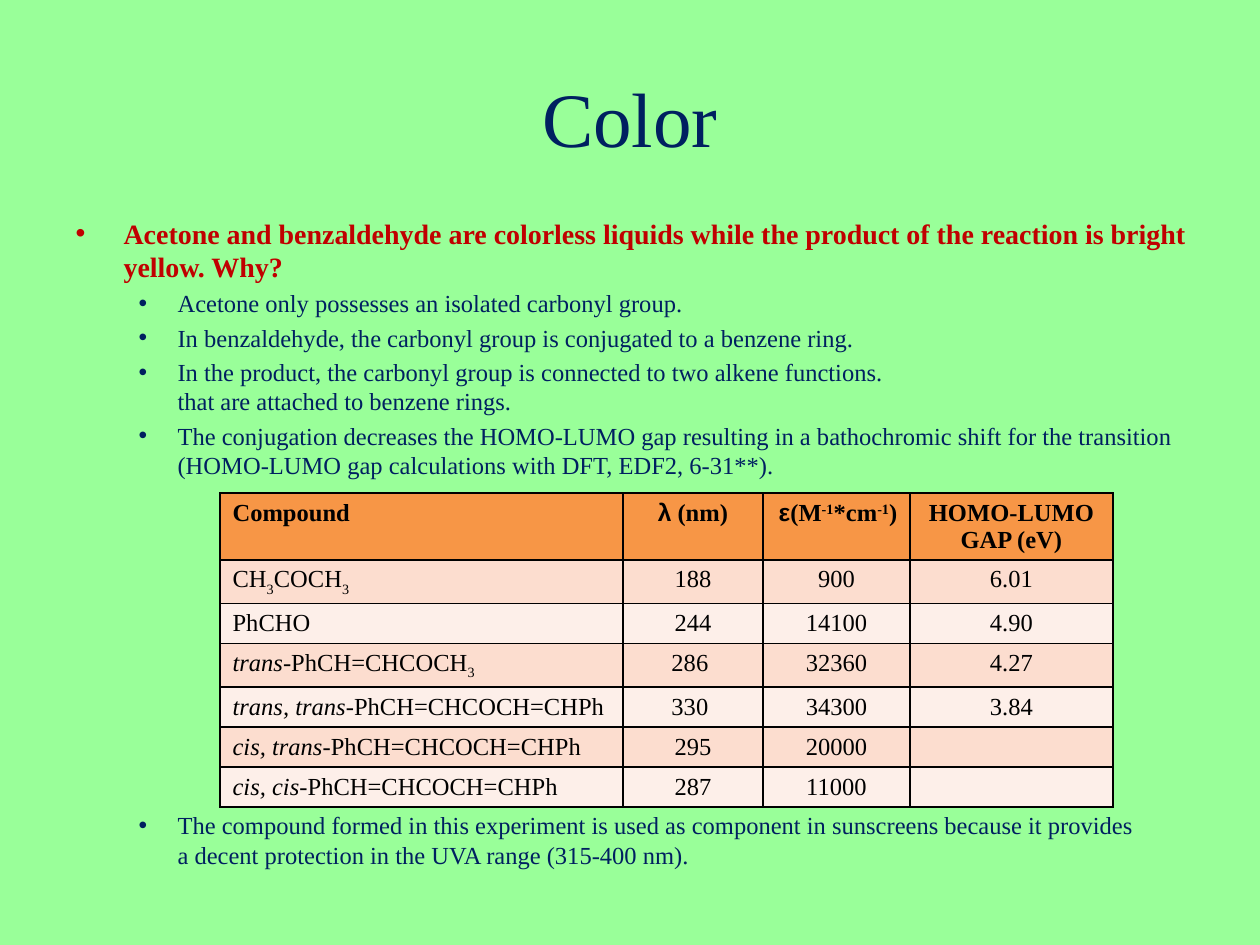
import copy

import lxml.etree
import pptx
import pptx.dml.color
import pptx.enum.text
import pptx.oxml.ns
import pptx.util

PX = 914400 // 126
NAVY = pptx.dml.color.RGBColor(0x00, 0x20, 0x60)
RED = pptx.dml.color.RGBColor(0xC0, 0x00, 0x00)
BLACK = pptx.dml.color.RGBColor(0x00, 0x00, 0x00)
GREEN = pptx.dml.color.RGBColor(0x99, 0xFF, 0x99)
ORANGE = pptx.dml.color.RGBColor(0xF7, 0x96, 0x46)
BANDS = (pptx.dml.color.RGBColor(0xFD, 0xEF, 0xE9),
         pptx.dml.color.RGBColor(0xFC, 0xDD, 0xCF))
ALIGN = pptx.enum.text.PP_ALIGN

FONT = "Times New Roman"
SUB = {"baseline": -25}
SUPER = {"baseline": 30}
ITALIC = {"italic": True}
ARIAL = {"font": "Arial"}

QUESTION = ("Acetone and benzaldehyde are colorless liquids while the product "
            "of the reaction is bright yellow. Why?")
POINTS = (
    "Acetone only possesses an isolated carbonyl group.",
    "In benzaldehyde, the carbonyl group is conjugated to a benzene ring.",
    "In the product, the carbonyl group is connected to two alkene functions. \n"
    "that are attached to benzene rings.",
    "The conjugation decreases the HOMO-LUMO gap resulting in a bathochromic "
    "shift for the transition (HOMO-LUMO gap calculations with DFT, EDF2, 6-31**).",
)
CONCLUSION = ("The compound formed in this experiment is used as component in "
              "sunscreens because it provides \n"
              "a decent protection in the UVA range (315-400 nm).")

# Each cell is a list of runs: (text, format).
HEADER = (
    [("Compound", {})],
    [("λ", ARIAL), (" (nm)", {})],
    [("ε", ARIAL), ("(M", {}), ("-1", SUPER), ("*cm", {}), ("-1", SUPER), (")", {})],
    [("HOMO-LUMO GAP (eV)", {})],
)
CHALCONE = ("-PhCH=CHCOCH=CHPh", {})
COMPOUNDS = (
    ([("CH", {}), ("3", SUB), ("COCH", {}), ("3", SUB)], "188", "900", "6.01"),
    ([("PhCHO", {})], "244", "14100", "4.90"),
    ([("trans", ITALIC), ("-PhCH=CHCOCH", {}), ("3", SUB)], "286 ", "32360", "4.27"),
    ([("trans, trans", ITALIC), CHALCONE], "330 ", "34300", "3.84"),
    ([("cis, trans", ITALIC), CHALCONE], "295", "20000", ""),
    ([("cis, cis", ITALIC), CHALCONE], "287", "11000", ""),
)
COLUMN_WIDTHS = (403, 140, 147, 203)
ROW_HEIGHT = 40


def add_text(paragraph, text, font=FONT, size=14, color=BLACK,
             bold=False, italic=False, baseline=0):
    """Add formatted text; a newline becomes a line break."""
    for index, line in enumerate(text.split("\n")):
        if index:
            paragraph.add_line_break()
            line_break = paragraph._p[-1]
            line_break.append(copy.deepcopy(run._r.rPr))
        run = paragraph.add_run()
        run.text = line
        run.font.name = font
        run.font.size = pptx.util.Pt(size)
        run.font.color.rgb = color
        run.font.bold = bold
        run.font.italic = italic
        if baseline:
            run._r.rPr.set("baseline", str(baseline * 1000))


def place(shape, left, top, width, height):
    shape.left, shape.top = left * PX, top * PX
    shape.width, shape.height = width * PX, height * PX


def add_child(parent, tag, **attributes):
    return lxml.etree.SubElement(parent, pptx.oxml.ns.qn(tag), **attributes)


def add_bullet(paragraph, text, level, margin, hanging, **text_format):
    paragraph.level = level
    properties = paragraph._p.get_or_add_pPr()
    properties.set("marL", str(margin * PX))
    properties.set("indent", str(-hanging * PX))
    add_child(properties, "a:buChar", char="•")
    add_text(paragraph, text, **text_format)


def fill_title(title):
    place(title, 63, 38, 1134, 157)
    title.text_frame.vertical_anchor = pptx.enum.text.MSO_ANCHOR.MIDDLE
    paragraph = title.text_frame.paragraphs[0]
    paragraph.alignment = ALIGN.CENTER
    add_text(paragraph, "Color", size=44, color=NAVY)


def fill_body(body):
    place(body, 63, 210, 1176, 693)
    frame = body.text_frame
    frame.auto_size = pptx.enum.text.MSO_AUTO_SIZE.NONE
    add_bullet(frame.paragraphs[0], QUESTION, 0, 48, 48, size=16, color=RED, bold=True)
    for point in POINTS + (CONCLUSION,):
        paragraph = frame.add_paragraph()
        if point == CONCLUSION:
            paragraph.space_before = pptx.util.Pt(189)  # room for the table
        add_bullet(paragraph, point, 1, 102, 39, color=NAVY)


def add_borders(cell):
    """Draw black one-point lines on all sides, ahead of the cell's fill."""
    properties = cell._tc.get_or_add_tcPr()
    for index, side in enumerate(("a:lnL", "a:lnR", "a:lnT", "a:lnB")):
        line = add_child(properties, side, w="12700")
        add_child(add_child(line, "a:solidFill"), "a:srgbClr", val=str(BLACK))
        properties.insert(index, line)


def fill_cell(cell, runs, fill, alignment, bold=False):
    cell.fill.solid()
    cell.fill.fore_color.rgb = fill
    add_borders(cell)
    paragraph = cell.text_frame.paragraphs[0]
    paragraph.alignment = alignment
    for text, text_format in runs:
        add_text(paragraph, text, bold=bold, **text_format)
    if not runs:  # an empty cell must not be taller than its row
        end = add_child(paragraph._p, "a:endParaRPr", sz="1400")
        add_child(end, "a:latin", typeface=FONT)


def add_compound_table(slide):
    row_count = len(COMPOUNDS) + 1
    table = slide.shapes.add_table(
        row_count, len(COLUMN_WIDTHS), 220 * PX, 493 * PX,
        sum(COLUMN_WIDTHS) * PX, row_count * ROW_HEIGHT * PX).table
    for column, width in zip(table.columns, COLUMN_WIDTHS):
        column.width = width * PX
    header_alignments = (ALIGN.LEFT, ALIGN.CENTER, ALIGN.RIGHT, ALIGN.CENTER)
    for index, (runs, alignment) in enumerate(zip(HEADER, header_alignments)):
        fill_cell(table.cell(0, index), runs, ORANGE, alignment, bold=True)
    for row, (name, *values) in enumerate(COMPOUNDS, 1):
        fill = BANDS[row % 2]
        fill_cell(table.cell(row, 0), name, fill, ALIGN.LEFT)
        for index, value in enumerate(values, 1):
            runs = [(value, {})] if value else []
            fill_cell(table.cell(row, index), runs, fill, ALIGN.CENTER)


def main():
    presentation = pptx.Presentation()
    presentation.slide_width = pptx.util.Inches(10)
    presentation.slide_height = pptx.util.Inches(7.5)
    slide = presentation.slides.add_slide(presentation.slide_layouts[1])
    slide.background.fill.solid()
    slide.background.fill.fore_color.rgb = GREEN
    fill_title(slide.shapes.title)
    fill_body(slide.placeholders[1])
    add_compound_table(slide)
    presentation.save("out.pptx")


if __name__ == "__main__":
    main()
